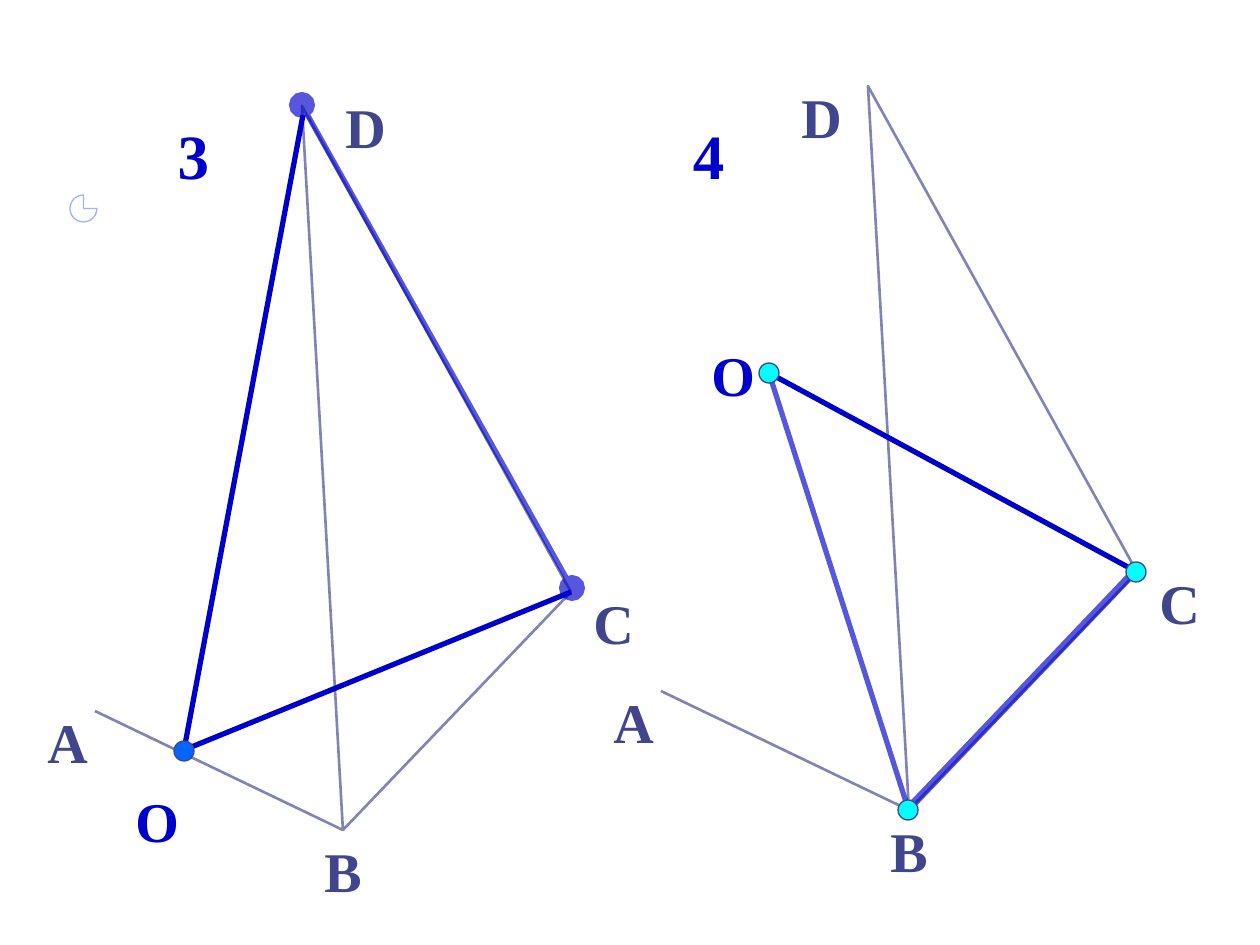
from dataclasses import dataclass

from lxml.etree import SubElement
from pptx import Presentation
from pptx.dml.color import RGBColor
from pptx.enum.shapes import MSO_CONNECTOR, MSO_SHAPE
from pptx.enum.text import MSO_ANCHOR, PP_ALIGN
from pptx.oxml.ns import qn
from pptx.util import Emu, Pt

EMU_PER_PX = 914400 / 126
Point = tuple[int, int]


@dataclass(frozen=True)
class Theme:
    font: str = "Times New Roman"
    blue: str = "0000CC"
    slate: str = "40458C"
    pale_blue: str = "6F89F7"
    azure: str = "0066FF"
    cyan: str = "00FFFF"
    letter_size: int = 32
    number_size: int = 36
    opacity: int = 65
    outline: float = 0.75
    thin: float = 1.5
    thick: float = 3
    extra_thick: float = 4.5


THEME = Theme()


@dataclass(frozen=True)
class Label:
    text: str
    at: Point
    width: int = 66
    color: str = THEME.slate
    size: int = THEME.letter_size
    centered: bool = False


@dataclass(frozen=True)
class Segment:
    start: Point
    end: Point
    width: float = THEME.thick
    opacity: int = 100
    oval_ends: bool = False


@dataclass(frozen=True)
class Dot:
    center: Point
    color: str = THEME.cyan


@dataclass(frozen=True)
class Figure:
    offset: Point
    labels: list[Label]
    segments: list[Segment]
    dots: list[Dot]


# Broken line A-B-C-D-B and the letters that keep their place beside it
SKELETON: list[Point] = [(95, 711), (343, 830), (571, 592), (302, 106), (343, 830)]
VERTEX_LABELS = [
    Label("А", (35, 701)),
    Label("В", (312, 830), 63),
    Label("С", (581, 582)),
]

FIGURES = [
    Figure(
        offset=(0, 0),
        labels=[
            Label("3", (164, 115), 59, THEME.blue, THEME.number_size, True),
            Label("О", (123, 780), 69, THEME.blue),
            Label("D", (333, 86)),
        ],
        segments=[
            Segment((572, 588), (302, 105), opacity=THEME.opacity, oval_ends=True),
            Segment((184, 750), (571, 592)),
            Segment((303, 115), (184, 750)),
        ],
        dots=[Dot((184, 751), THEME.azure)],
    ),
    Figure(
        offset=(566, -20),
        labels=[
            Label("4", (679, 115), 59, THEME.blue, THEME.number_size, True),
            Label("О", (699, 334), 69, THEME.blue),
            Label("D", (789, 76)),
        ],
        segments=[
            Segment((1138, 568), (912, 805), THEME.extra_thick, THEME.opacity),
            Segment((907, 805), (769, 373), opacity=THEME.opacity),
            Segment((769, 373), (1137, 572)),
        ],
        dots=[Dot((769, 373)), Dot((908, 810)), Dot((1136, 572))],
    ),
]


def px(length: int) -> Emu:
    return Emu(round(length * EMU_PER_PX))


def shift(point: Point, offset: Point) -> Point:
    return point[0] + offset[0], point[1] + offset[1]


def style_line(shape, color: str, width: float, opacity: int = 100) -> None:
    shape.line.color.rgb = RGBColor.from_string(color)
    shape.line.width = Pt(width)
    if opacity < 100:
        color_element = shape.element.spPr.find(qn("a:ln")).find(".//" + qn("a:srgbClr"))
        SubElement(color_element, qn("a:alpha"), val=str(opacity * 1000))


def draw_skeleton(slide, offset: Point) -> None:
    start, *others = [shift(point, offset) for point in SKELETON]
    builder = slide.shapes.build_freeform(*start, scale=EMU_PER_PX)
    builder.add_line_segments(others, close=False)
    shape = builder.convert_to_shape()
    shape.shadow.inherit = False
    shape.fill.background()
    style_line(shape, THEME.slate, THEME.thin, THEME.opacity)


def draw_label(slide, label: Label, offset: Point = (0, 0)) -> None:
    left, top = shift(label.at, offset)
    box = slide.shapes.add_textbox(px(left), px(top), px(label.width), px(79))
    frame = box.text_frame
    frame.word_wrap = True
    frame.text = label.text
    paragraph = frame.paragraphs[0]
    if label.centered:
        frame.vertical_anchor = MSO_ANCHOR.MIDDLE
        paragraph.alignment = PP_ALIGN.CENTER
    font = paragraph.runs[0].font
    font.name = THEME.font
    font.size = Pt(label.size)
    font.bold = True
    font.color.rgb = RGBColor.from_string(label.color)


def draw_segment(slide, segment: Segment) -> None:
    ends = [px(value) for value in segment.start + segment.end]
    connector = slide.shapes.add_connector(MSO_CONNECTOR.STRAIGHT, *ends)
    style_line(connector, THEME.blue, segment.width, segment.opacity)
    properties = connector.element.spPr
    if segment.oval_ends:
        for tag in ("a:headEnd", "a:tailEnd"):
            SubElement(properties.find(qn("a:ln")), qn(tag), type="oval", w="lg", len="lg")
    SubElement(properties, qn("a:effectLst"))


def draw_dot(slide, dot: Dot) -> None:
    left, top = shift(dot.center, (-10, -10))
    shape = slide.shapes.add_shape(MSO_SHAPE.OVAL, px(left), px(top), px(20), px(20))
    shape.shadow.inherit = False
    shape.fill.solid()
    shape.fill.fore_color.rgb = RGBColor.from_string(dot.color)
    style_line(shape, THEME.slate, THEME.outline)


def draw_pie_outline(slide) -> None:
    shape = slide.shapes.add_shape(MSO_SHAPE.PIE, px(70), px(195), px(27), px(27))
    shape.shadow.inherit = False
    shape.fill.background()
    style_line(shape, THEME.pale_blue, THEME.outline, THEME.opacity)


def draw_figure(slide, figure: Figure) -> None:
    draw_skeleton(slide, figure.offset)
    for label in VERTEX_LABELS:
        draw_label(slide, label, figure.offset)
    for label in figure.labels:
        draw_label(slide, label)
    for segment in figure.segments:
        draw_segment(slide, segment)
    for dot in figure.dots:
        draw_dot(slide, dot)


def main() -> None:
    presentation = Presentation()
    presentation.slide_width = px(1260)
    presentation.slide_height = px(945)
    slide = presentation.slides.add_slide(presentation.slide_layouts[6])

    # Small background ornament, then the two numbered constructions
    draw_pie_outline(slide)
    for figure in FIGURES:
        draw_figure(slide, figure)
    presentation.save("out.pptx")


if __name__ == "__main__":
    main()
